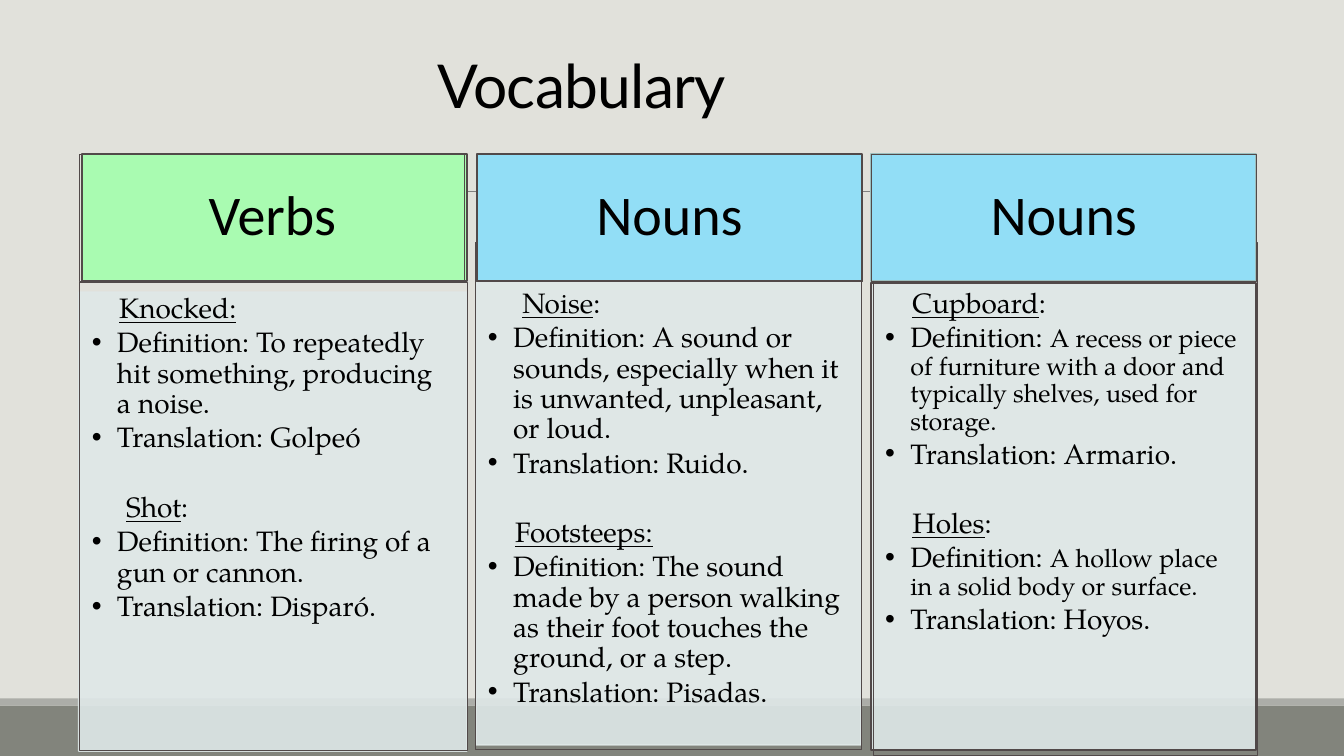
from dataclasses import dataclass
from typing import Optional

from lxml import etree
from pptx import Presentation
from pptx.dml.color import RGBColor
from pptx.enum.shapes import MSO_CONNECTOR, MSO_SHAPE
from pptx.enum.text import MSO_ANCHOR, MSO_AUTO_SIZE, PP_ALIGN
from pptx.oxml.ns import qn
from pptx.util import Inches, Pt

RECT = MSO_SHAPE.RECTANGLE
STRAIGHT = MSO_CONNECTOR.STRAIGHT
TOP, MIDDLE, BOTTOM = MSO_ANCHOR.TOP, MSO_ANCHOR.MIDDLE, MSO_ANCHOR.BOTTOM
LEFT, CENTER = PP_ALIGN.LEFT, PP_ALIGN.CENTER
NO_AUTOFIT = MSO_AUTO_SIZE.NONE

BACKGROUND = RGBColor(0xE1, 0xE1, 0xDB)
FOOTER = RGBColor(0x82, 0x84, 0x7C)
FOOTER_EDGE = RGBColor(0xAC, 0xAD, 0xA8)
RULE = RGBColor(0x80, 0x80, 0x80)
BLACK = RGBColor(0, 0, 0)
PANEL = RGBColor(0xDF, 0xE8, 0xE8)
OUTLINE = RGBColor(0x51, 0x49, 0x49)
TEAL = RGBColor(0x9D, 0xBF, 0xBE)
GREEN = RGBColor(0xA9, 0xFB, 0xB1)
BLUE = RGBColor(0x92, 0xDE, 0xF6)

HEADER_TOP, HEADER_WIDTH, HEADER_HEIGHT = 1.53, 3.82, 1.26
BODY_FONT = "TeX Gyre Pagella"
Box = tuple[float, float, float, float]


@dataclass
class Word:
    term: str
    colon_underlined: bool
    indent: float
    definition: str
    translation: str
    definition_size: int = 20


@dataclass
class Column:
    heading: str
    color: RGBColor
    header_line: RGBColor
    header_left: float
    frame_left: float
    panel: Box
    panel_line: RGBColor
    body: Box
    top_inset: float
    words: list[Word]


COLUMNS = [
    Column("Verbs", GREEN, OUTLINE, 0.81, 0.79,
           (0.78, 2.9, 3.85, 4.55), PANEL, (0.79, 2.8, 3.85, 4.65), 0.12, [
               Word("Knocked", True, 0.27,
                    "To repeatedly hit something, producing a noise.", "Golpeó"),
               Word("Shot", False, 0.34, "The firing of a gun or cannon.", "Disparó."),
           ]),
    Column("Nouns", BLUE, OUTLINE, 4.73, 4.73,
           (4.72, 2.72, 3.82, 4.67), PANEL, (4.72, 2.41, 3.83, 5.03), 0.46, [
               Word("Noise", False, 0.34,
                    "A sound or sounds, especially when it is unwanted, unpleasant, or loud.",
                    "Ruido."),
               Word("Footsteeps", True, 0.27,
                    "The sound made by a person walking as their foot touches the ground, or a step.",
                    "Pisadas."),
           ]),
    Column("Nouns", BLUE, TEAL, 8.64, 8.64,
           (8.64, 2.81, 3.82, 4.63), OUTLINE, (8.66, 2.41, 3.81, 5.09), 0.46, [
               Word("Cupboard", False, 0.27,
                    "A recess or piece of furniture with a door and typically shelves, used for storage.",
                    "Armario.", 18),
               Word("Holes", False, 0.27,
                    "A hollow place in a solid body or surface.", "Hoyos.", 18),
           ]),
]


def add_rect(s, box: Box, fill: Optional[RGBColor] = None,
             line: Optional[RGBColor] = None, width: float = 0.75):
    sp = s.shapes.add_shape(RECT, *map(Inches, box))
    sp.shadow.inherit = False
    if fill is None:
        sp.fill.background()
    else:
        sp.fill.solid()
        sp.fill.fore_color.rgb = fill
    if line is None:
        sp.line.fill.background()
    else:
        sp.line.color.rgb = line
        sp.line.width = Pt(width)
    return sp


def set_frame(sp, anchor, insets: Box):
    tf = sp.text_frame
    tf.word_wrap = True
    tf.auto_size = NO_AUTOFIT
    tf.vertical_anchor = anchor
    tf.margin_left, tf.margin_top, tf.margin_right, tf.margin_bottom = map(Inches, insets)
    return tf


def add_run(p, text: str, size: float, font: str = BODY_FONT, underline: bool = False):
    r = p.add_run()
    r.text = text
    r.font.size = Pt(size)
    r.font.name = font
    r.font.color.rgb = BLACK
    if underline:
        r.font.underline = True
    return r


def format_paragraph(p, align=LEFT, after: float = 3, indent: float = 0) -> None:
    p.alignment = align
    p.line_spacing = 0.9
    p.space_after = Pt(after)
    if indent:
        p._p.get_or_add_pPr().set("marL", str(Inches(indent)))


def add_bullet(tf, label: str, text: str, size: float = 20) -> None:
    p = tf.add_paragraph()
    format_paragraph(p, indent=0.25)
    pPr = p._p.get_or_add_pPr()
    pPr.set("indent", str(Inches(-0.25)))
    etree.SubElement(pPr, qn("a:buFont")).set("typeface", "Arial")
    etree.SubElement(pPr, qn("a:buChar")).set("char", "•")
    add_run(p, label, 20)
    add_run(p, text, size)


def add_word(tf, word: Word, first: bool) -> None:
    p = tf.paragraphs[0] if first else tf.add_paragraph()
    format_paragraph(p, indent=word.indent)
    if not first:
        p.space_before = Pt(25)
    add_run(p, word.term, 20, underline=True)
    add_run(p, ":", 20, underline=word.colon_underlined)
    add_bullet(tf, "Definition: ", word.definition, word.definition_size)
    add_bullet(tf, "Translation: ", word.translation)


def add_column(s, column: Column) -> None:
    panel = add_rect(s, column.panel, PANEL, column.panel_line, 1.25)
    for color in panel._element.spPr.iter(qn("a:srgbClr")):
        if color.get("val") == str(PANEL):
            etree.SubElement(color, qn("a:alpha")).set("val", "90000")

    body = add_rect(s, column.body, line=OUTLINE)
    tf = set_frame(body, TOP, (0.12, column.top_inset, 0.16, 0.17))
    for i, word in enumerate(column.words):
        add_word(tf, word, i == 0)

    size = (HEADER_TOP, HEADER_WIDTH, HEADER_HEIGHT)
    add_rect(s, (column.header_left, *size), column.color, column.header_line, 1.25)
    frame = add_rect(s, (column.frame_left, *size), line=OUTLINE)
    p = set_frame(frame, MIDDLE, (0.31, 0.18, 0.31, 0.18)).paragraphs[0]
    format_paragraph(p, CENTER, 14)
    add_run(p, column.heading, 40, "Calibri")


def add_title(s, text: str) -> None:
    sp = s.shapes.title
    sp.left, sp.top, sp.width, sp.height = map(Inches, (4.24, 0.09, 4.26, 1.16))
    p = set_frame(sp, BOTTOM, (0.1, 0.05, 0.1, 0.05)).paragraphs[0]
    p.alignment = LEFT
    p.line_spacing = 0.85
    r = add_run(p, text, 43.2, "Lato")
    r.font._element.set("spc", "-50")


def main() -> None:
    prs = Presentation()
    prs.slide_width, prs.slide_height = Inches(13.33), Inches(7.5)
    s = prs.slides.add_slide(prs.slide_layouts[5])
    s.background.fill.solid()
    s.background.fill.fore_color.rgb = BACKGROUND

    add_rect(s, (0, 7, 13.33, 0.5), FOOTER)
    add_rect(s, (0, 6.93, 13.33, 0.07), FOOTER_EDGE)
    rule = s.shapes.add_connector(STRAIGHT, *map(Inches, (1.31, 1.9, 12.21, 1.9)))
    rule.line.color.rgb = RULE
    rule.line.width = Pt(0.5)
    etree.SubElement(rule._element.spPr, qn("a:effectLst"))

    add_title(s, "Vocabulary")
    for column in COLUMNS:
        add_column(s, column)
    prs.save("out.pptx")


if __name__ == "__main__":
    main()
